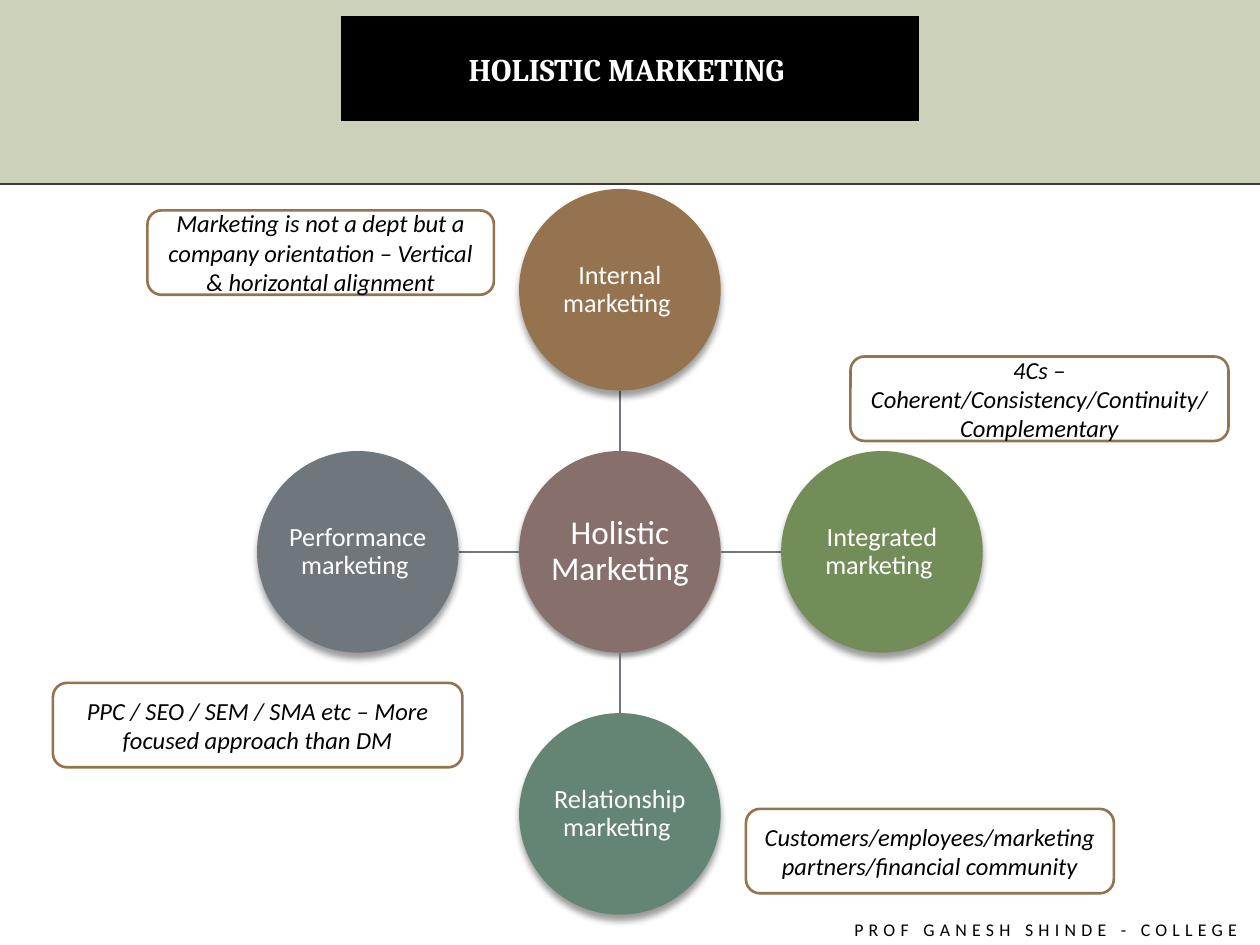
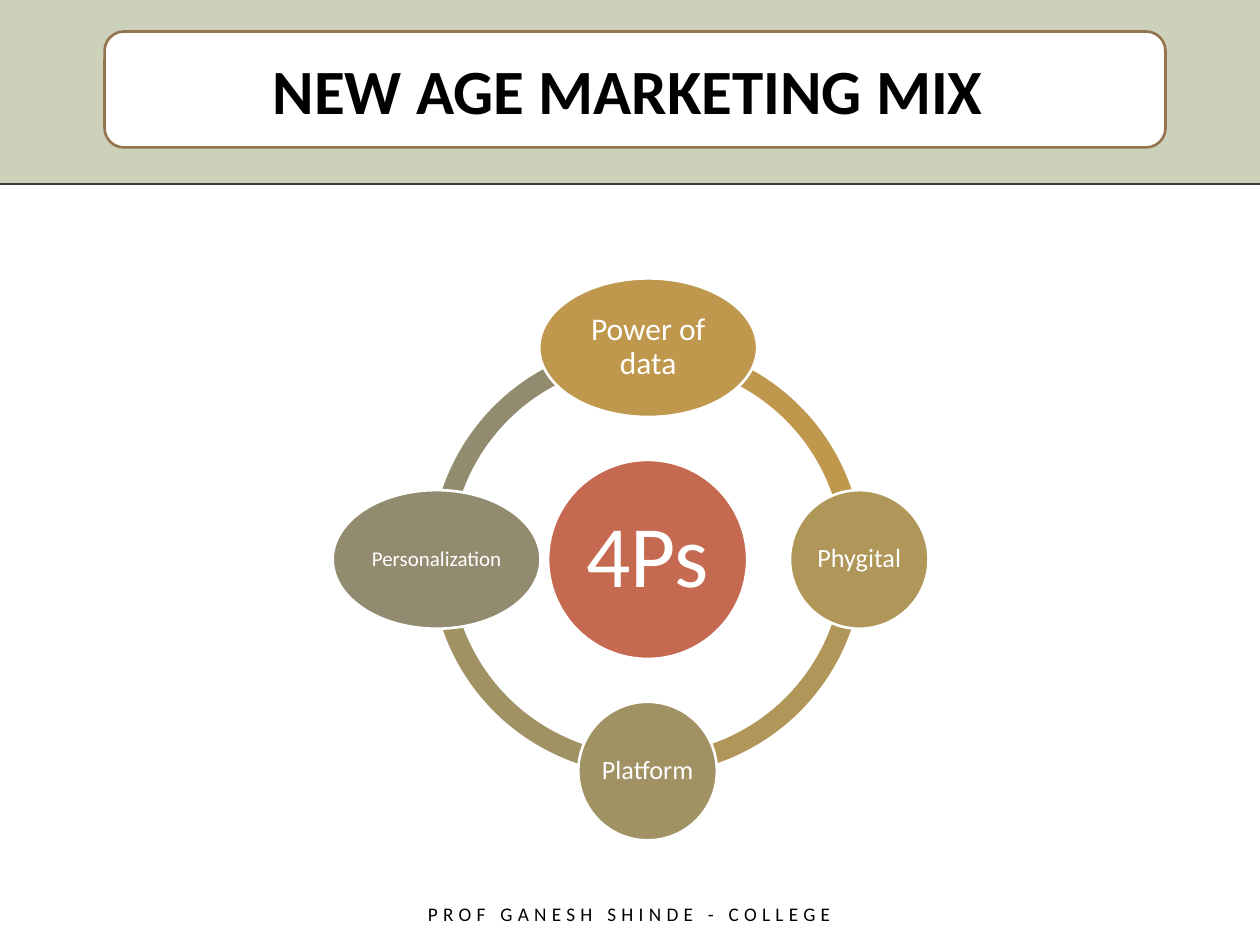
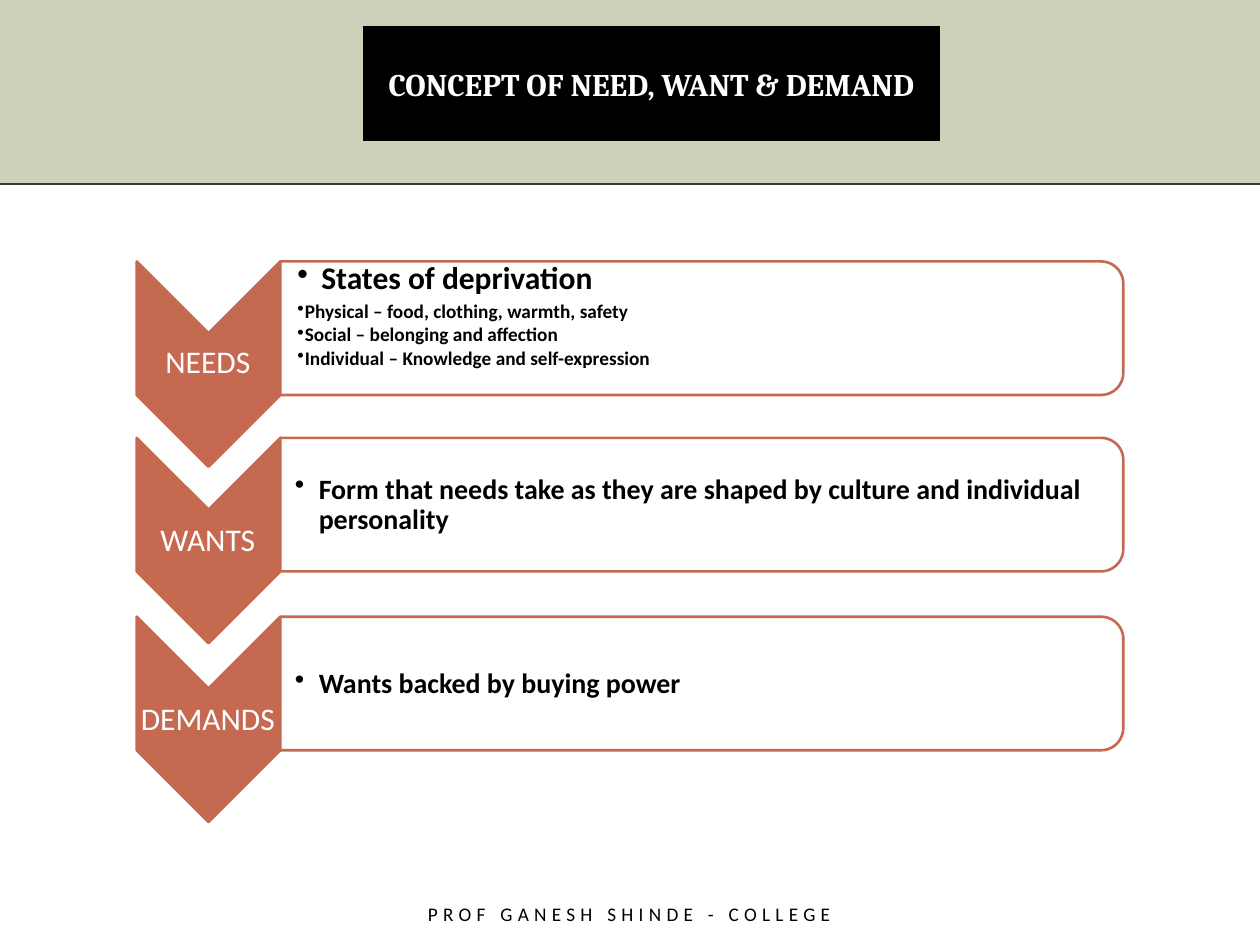
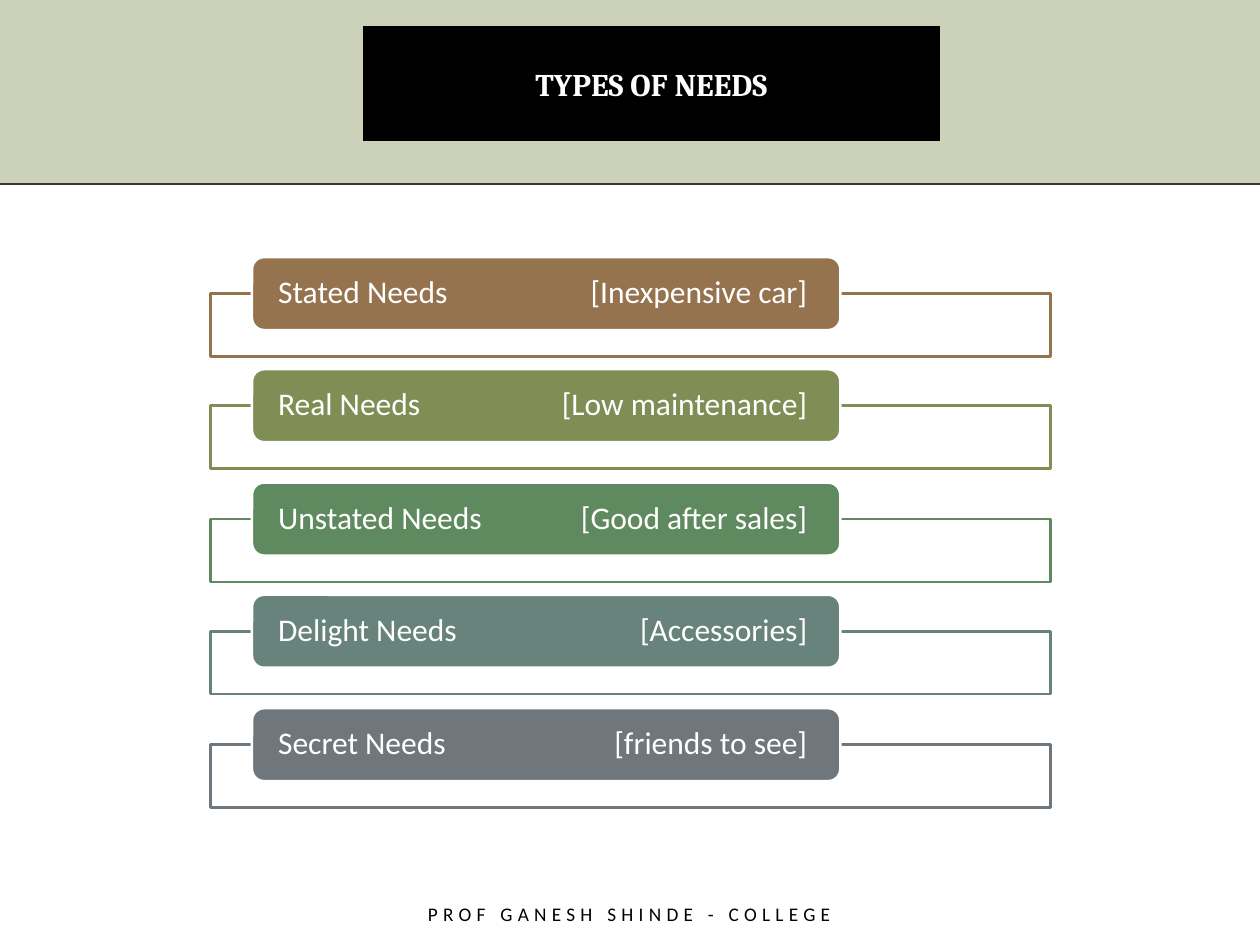
import math
from dataclasses import dataclass
from typing import NamedTuple

import lxml.etree
import pptx
import pptx.dml.color
import pptx.enum.shapes
import pptx.enum.text
import pptx.oxml.ns
import pptx.shapes.autoshape
import pptx.slide
import pptx.text.text
import pptx.util

EMU_PER_PX = 9144
SLIDE_WIDTH, SLIDE_HEIGHT = 1000, 750
BAND_HEIGHT = 146

WHITE, BLACK = "FFFFFF", "000000"
SAGE, CHARCOAL = "CCD1B9", "3E3737"
BROWN, SLATE, CORAL = "94734E", "6F777D", "C66951"

SHAPE = pptx.enum.shapes.MSO_SHAPE
ALIGN = pptx.enum.text.PP_ALIGN
FOOTER_TEXT = "PROF GANESH SHINDE - COLLEGE"


class Box(NamedTuple):
    left: int
    top: int
    width: int
    height: int


class Insets(NamedTuple):
    left: int = 10
    top: int = 5
    right: int = 10
    bottom: int = 5


@dataclass(frozen=True)
class TextStyle:
    size: float
    color: str = WHITE
    font: str = "Calibri"
    bold: bool = False
    italic: bool = False
    align: ALIGN = ALIGN.CENTER
    line_spacing: float = 1.0
    insets: Insets = Insets()


class Node(NamedTuple):
    text: str
    angle: int
    fill: str
    width: int = 110
    size: int = 15


class Callout(NamedTuple):
    text: str
    box: Box


class Bullet(NamedTuple):
    text: str
    size: int = 16
    indent: int = 19


class Step(NamedTuple):
    label: str
    bullets: list[Bullet]
    insets: Insets = Insets(12, 1, 1, 1)


class Need(NamedTuple):
    name: str
    example: str
    color: str


TITLE_STYLE = TextStyle(18, font="Cambria", bold=True)
TITLE_BOX = Box(292, 25, 450, 83)
FOOTER_BOX = Box(158, 709, 683, 32)
CALLOUT_STYLE = TextStyle(14, BLACK, italic=True)


def px(length: float) -> int:
    return round(length * EMU_PER_PX)


def rgb(color: str) -> pptx.dml.color.RGBColor:
    return pptx.dml.color.RGBColor.from_string(color)


def spread(first: int, last: int, count: int) -> list[int]:
    return [first + index * (last - first) // (count - 1) for index in range(count)]


def centred(x: float, y: float, width: int, height: int) -> Box:
    return Box(round(x - width / 2), round(y - height / 2), width, height)


def orbit(center: tuple[int, int], radius: int, angle: int) -> tuple[int, int]:
    turn = math.radians(angle)
    return (round(center[0] + radius * math.cos(turn)),
            round(center[1] + radius * math.sin(turn)))


def draw_shape(slide: pptx.slide.Slide, kind: SHAPE, box: Box, fill: str,
               line: str | None = None, line_width: float = 1.5,
               opacity: int = 100) -> pptx.shapes.autoshape.Shape:
    shape = slide.shapes.add_shape(kind, *map(px, box))
    shape.shadow.inherit = False
    shape.fill.solid()
    shape.fill.fore_color.rgb = rgb(fill)
    if opacity < 100:
        color = next(shape.fill._xPr.iter(pptx.oxml.ns.qn("a:srgbClr")))
        lxml.etree.SubElement(color, pptx.oxml.ns.qn("a:alpha"), val=str(opacity * 1000))
    if line is None:
        shape.line.fill.background()
    else:
        shape.line.color.rgb = rgb(line)
        shape.line.width = pptx.util.Pt(line_width)
    return shape


def draw_turned(slide: pptx.slide.Slide, kind: SHAPE, box: Box, fill: str,
                line: str, opacity: int = 100) -> None:
    frame = centred(box.left + box.width / 2, box.top + box.height / 2,
                    box.height, box.width)
    draw_shape(slide, kind, frame, fill, line, opacity=opacity).rotation = 90


def draw_line(slide: pptx.slide.Slide, start: tuple[int, int], end: tuple[int, int],
              color: str, width: float) -> None:
    connector = slide.shapes.add_connector(
        pptx.enum.shapes.MSO_CONNECTOR.STRAIGHT, *map(px, (*start, *end)))
    connector.line.color.rgb = rgb(color)
    connector.line.width = pptx.util.Pt(width)
    lxml.etree.SubElement(connector._element.spPr, pptx.oxml.ns.qn("a:effectLst"))


def drop_shadow(shape: pptx.shapes.autoshape.Shape, blur: float, distance: float) -> None:
    effects = shape._element.spPr.find(pptx.oxml.ns.qn("a:effectLst"))
    shadow = lxml.etree.SubElement(
        effects, pptx.oxml.ns.qn("a:outerShdw"), blurRad=str(pptx.util.Pt(blur)),
        dist=str(pptx.util.Pt(distance)), dir="5400000", rotWithShape="0")
    color = lxml.etree.SubElement(shadow, pptx.oxml.ns.qn("a:srgbClr"), val=BLACK)
    lxml.etree.SubElement(color, pptx.oxml.ns.qn("a:alpha"), val="40000")


def set_frame(shape: pptx.shapes.autoshape.Shape,
              insets: Insets) -> pptx.text.text.TextFrame:
    frame = shape.text_frame
    frame.word_wrap = True
    frame.vertical_anchor = pptx.enum.text.MSO_ANCHOR.MIDDLE
    frame.margin_left, frame.margin_top, frame.margin_right, frame.margin_bottom = map(px, insets)
    return frame


def set_paragraph(paragraph: pptx.text.text._Paragraph, text: str, style: TextStyle) -> None:
    paragraph.text = text
    paragraph.alignment = style.align
    paragraph.line_spacing = style.line_spacing
    paragraph.font.name = style.font
    paragraph.font.size = pptx.util.Pt(style.size)
    paragraph.font.bold = style.bold
    paragraph.font.italic = style.italic
    paragraph.font.color.rgb = rgb(style.color)


def write(shape: pptx.shapes.autoshape.Shape, text: str,
          style: TextStyle) -> pptx.text.text._Paragraph:
    paragraph = set_frame(shape, style.insets).paragraphs[0]
    set_paragraph(paragraph, text, style)
    return paragraph


def draw_text(slide: pptx.slide.Slide, box: Box, text: str,
              style: TextStyle) -> pptx.text.text._Paragraph:
    return write(slide.shapes.add_textbox(*map(px, box)), text, style)


def diagram_style(size: int, inset: int) -> TextStyle:
    return TextStyle(size, line_spacing=0.9, insets=Insets(inset, inset, inset, inset))


def draw_disc(slide: pptx.slide.Slide, box: Box, fill: str, text: str, size: int,
              inset: int, line: str | None = None) -> pptx.shapes.autoshape.Shape:
    disc = draw_shape(slide, SHAPE.OVAL, box, fill, line)
    write(disc, text, diagram_style(size, inset))
    return disc


def start_slide(presentation) -> pptx.slide.Slide:
    slide = presentation.slides.add_slide(presentation.slide_layouts[6])
    body = Box(0, BAND_HEIGHT, SLIDE_WIDTH, SLIDE_HEIGHT - BAND_HEIGHT)
    draw_shape(slide, SHAPE.RECTANGLE, body, WHITE)
    draw_line(slide, (0, BAND_HEIGHT), (SLIDE_WIDTH, BAND_HEIGHT), CHARCOAL, 1)
    return slide


def draw_title(slide: pptx.slide.Slide, text: str, box: Box = TITLE_BOX) -> None:
    plate = draw_shape(slide, SHAPE.RECTANGLE, box, BLACK, BLACK, 6)
    outline = plate._element.spPr.find(pptx.oxml.ns.qn("a:ln"))
    lxml.etree.SubElement(outline, pptx.oxml.ns.qn("a:miter"), lim="800000")
    write(plate, text, TITLE_STYLE)


def draw_footer(slide: pptx.slide.Slide, box: Box = FOOTER_BOX, size: float = 11) -> None:
    style = TextStyle(size, BLACK, insets=Insets(0, 0, 0, 0))
    paragraph = draw_text(slide, box, FOOTER_TEXT, style)
    paragraph.runs[0]._r.get_or_add_rPr().set("spc", "300")


def build_holistic_marketing(presentation) -> None:
    center, distance, diameter = (492, 438), 208, 160
    nodes = [
        Node("Internal marketing ", 270, BROWN),
        Node("Integrated marketing ", 0, "738D59"),
        Node("Relationship marketing ", 90, "648573"),
        Node("Performance marketing ", 180, SLATE),
    ]
    callouts = [
        Callout("Customers/employees/marketing partners/financial community",
                Box(592, 642, 292, 67)),
        Callout("4Cs – Coherent/Consistency/Continuity/Complementary",
                Box(675, 283, 300, 67)),
        Callout("Marketing is not a dept but a company orientation – Vertical "
                "& horizontal alignment", Box(117, 167, 275, 67)),
        Callout("PPC / SEO / SEM / SMA etc – More focused approach than DM",
                Box(42, 542, 325, 67)),
    ]
    slide = start_slide(presentation)
    hub = draw_disc(slide, centred(*center, diameter, diameter), "87706B",
                    "Holistic Marketing ", 19, 1)
    drop_shadow(hub, 3, 2)
    for node in nodes:
        draw_line(slide, orbit(center, diameter // 2, node.angle),
                  orbit(center, distance - diameter // 2, node.angle), SLATE, 1.5)
        box = centred(*orbit(center, distance, node.angle), diameter, diameter)
        drop_shadow(draw_disc(slide, box, node.fill, node.text, node.size, 1), 4, 3.3)
    draw_title(slide, "HOLISTIC MARKETING ", Box(275, 17, 450, 75))
    for callout in callouts:
        shape = draw_shape(slide, SHAPE.ROUNDED_RECTANGLE, callout.box, WHITE, BROWN)
        write(shape, callout.text, CALLOUT_STYLE)
    draw_footer(slide, Box(660, 725, 340, 25), 10.2)


def build_marketing_mix(presentation) -> None:
    center, distance, ring, node_height = (514, 444), 168, 343, 110
    nodes = [
        Node("Power of data", 270, "BF974D", 173, 18),
        Node("Phygital", 0, "B09658"),
        Node("Platform", 90, "A19264"),
        Node("Personalization", 180, "928B70", 165, 12),
    ]
    slide = start_slide(presentation)
    for node in reversed(nodes):
        arc = draw_shape(slide, SHAPE.BLOCK_ARC, centred(*center, ring, ring), node.fill)
        arc.adjustments[0] = node.angle * 0.6
        arc.adjustments[1] = (node.angle + 90) % 360 * 0.6
        arc.adjustments[2] = 0.046
    draw_disc(slide, centred(*center, 158, 158), CORAL, "4Ps", 50, 7, WHITE)
    for node in nodes:
        box = centred(*orbit(center, distance, node.angle), node.width, node_height)
        draw_disc(slide, box, node.fill, node.text, node.size, 2, WHITE)
    banner = draw_shape(slide, SHAPE.ROUNDED_RECTANGLE, Box(83, 25, 842, 92), WHITE, BROWN)
    write(banner, "NEW AGE MARKETING MIX ", TextStyle(36, BLACK, bold=True))
    draw_footer(slide)


def draw_bullets(slide: pptx.slide.Slide, box: Box, step: Step) -> None:
    frame = set_frame(slide.shapes.add_textbox(*map(px, box)), step.insets)
    for index, bullet in enumerate(step.bullets):
        paragraph = frame.add_paragraph() if index else frame.paragraphs[0]
        set_paragraph(paragraph, bullet.text, TextStyle(
            bullet.size, BLACK, bold=True, align=ALIGN.LEFT, line_spacing=0.9))
        paragraph.space_after = pptx.util.Pt(bullet.size * 0.15)
        properties = paragraph._p.get_or_add_pPr()
        properties.set("marL", str(px(bullet.indent)))
        properties.set("indent", str(px(-bullet.indent)))
        mark = lxml.etree.Element(pptx.oxml.ns.qn("a:buChar"), char="•")
        properties.find(pptx.oxml.ns.qn("a:defRPr")).addprevious(mark)


def build_need_want_demand(presentation) -> None:
    steps = [
        Step("NEEDS", [
            Bullet("States of deprivation", 18),
            Bullet("Physical – food, clothing, warmth, safety", 11, 6),
            Bullet("Social – belonging and affection", 11, 6),
            Bullet("Individual – Knowledge and self-expression", 11, 6),
        ], Insets(14, 1, 1, 19)),
        Step("WANTS", [Bullet("Form that needs take as they are shaped by culture "
                              "and individual personality")]),
        Step("DEMANDS", [Bullet("Wants backed by buying power")]),
    ]
    slide = start_slide(presentation)
    draw_title(slide, "CONCEPT OF NEED, WANT & DEMAND")
    draw_footer(slide)
    for step, top in zip(steps, spread(207, 490, len(steps))):
        draw_turned(slide, SHAPE.CHEVRON, Box(108, top, 114, 163), CORAL, CORAL)
        draw_text(slide, Box(108, top + 57, 114, 49), step.label, diagram_style(18, 1))
        draw_turned(slide, SHAPE.ROUND_2_SAME_RECTANGLE, Box(222, top, 669, 106),
                    WHITE, CORAL, 90)
        draw_bullets(slide, Box(222, top + 5, 664, 96), step)


def build_types_of_needs(presentation) -> None:
    needs = [
        Need("Stated Needs", "[Inexpensive car]", BROWN),
        Need("Real Needs", "[Low maintenance]", "808E56"),
        Need("Unstated Needs", "[Good after sales]", "5F895E"),
        Need("Delight Needs", "[Accessories]", "67837B"),
        Need("Secret Needs", "[friends to see]", SLATE),
    ]
    style = TextStyle(18, align=ALIGN.LEFT, line_spacing=0.9, insets=Insets(18, 0, 18, 0))
    slide = start_slide(presentation)
    draw_title(slide, "TYPES OF NEEDS")
    draw_footer(slide)
    for need, top in zip(needs, spread(233, 591, len(needs))):
        draw_shape(slide, SHAPE.RECTANGLE, Box(167, top, 667, 50), WHITE, need.color,
                   opacity=90)
        label = draw_shape(slide, SHAPE.ROUNDED_RECTANGLE, Box(200, top - 29, 467, 58),
                           need.color, WHITE)
        paragraph = write(label, f"{need.name}\t{need.example}", style)
        tabs = lxml.etree.Element(pptx.oxml.ns.qn("a:tabLst"))
        lxml.etree.SubElement(tabs, pptx.oxml.ns.qn("a:tab"), pos=str(px(420)), algn="r")
        properties = paragraph._p.get_or_add_pPr()
        properties.find(pptx.oxml.ns.qn("a:defRPr")).addprevious(tabs)


def main() -> None:
    presentation = pptx.Presentation()
    presentation.slide_width = px(SLIDE_WIDTH)
    presentation.slide_height = px(SLIDE_HEIGHT)
    background = presentation.slide_master.background.fill
    background.solid()
    background.fore_color.rgb = rgb(SAGE)
    build_holistic_marketing(presentation)
    build_marketing_mix(presentation)
    build_need_want_demand(presentation)
    build_types_of_needs(presentation)
    presentation.save("out.pptx")


if __name__ == "__main__":
    main()
